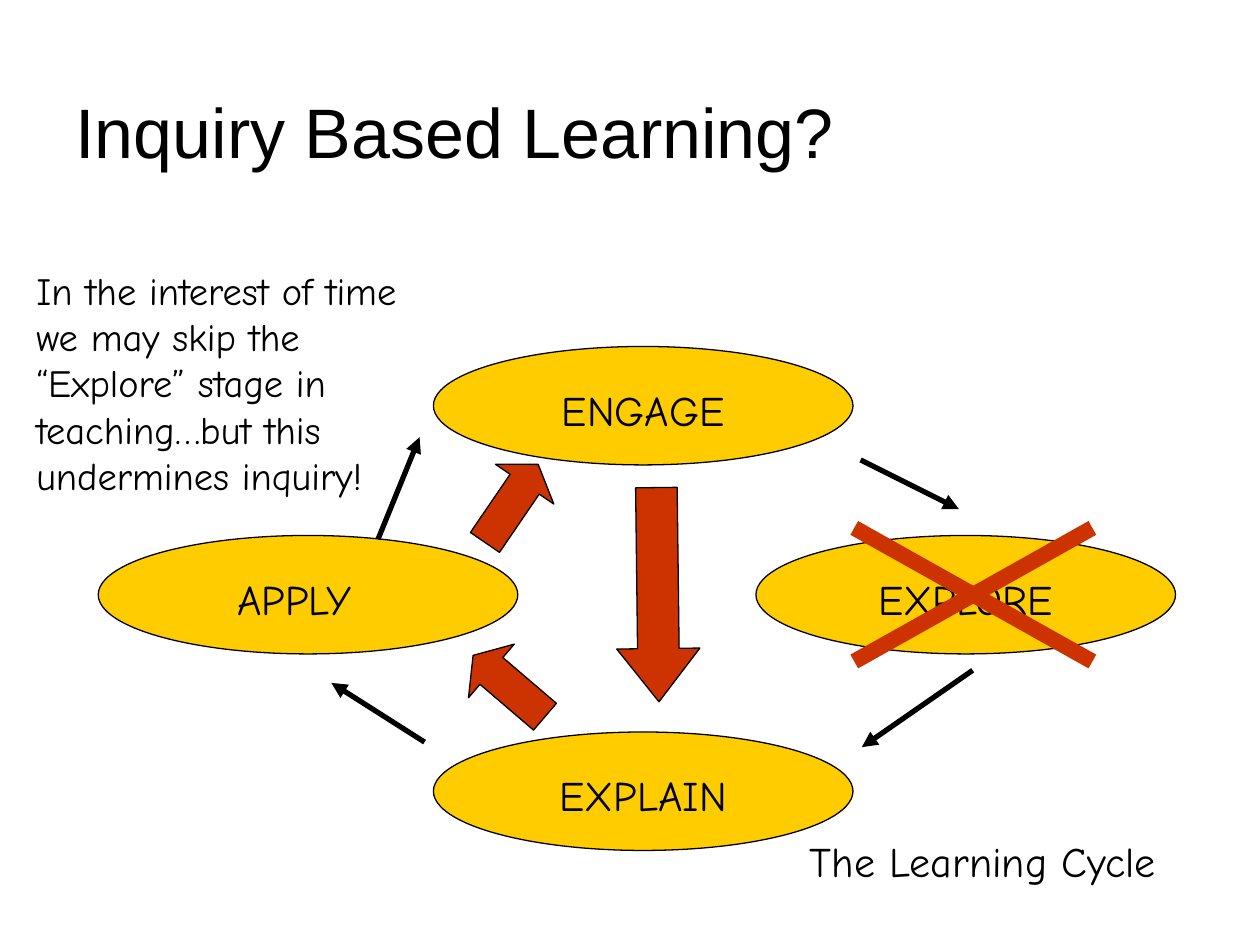
"""Build the learning cycle slide on inquiry based learning."""
from lxml.etree import SubElement
from pptx import Presentation
from pptx.dml.color import RGBColor
from pptx.enum.shapes import MSO_CONNECTOR, MSO_SHAPE
from pptx.enum.text import MSO_ANCHOR, PP_ALIGN
from pptx.oxml.ns import qn
from pptx.util import Inches, Pt

BLACK = RGBColor(0x00, 0x00, 0x00)
GOLD = RGBColor(0xFF, 0xCC, 0x00)
RED = RGBColor(0xCC, 0x33, 0x00)

TITLE = "Inquiry Based Learning?"
NOTE = (
    "In the interest of time we may skip the “Explore” stage in "
    "teaching…but this undermines inquiry!"
)
CAPTION = "The Learning Cycle"

STAGE_WIDTH, STAGE_HEIGHT = 3.33, 0.94
LABEL_WIDTH, LABEL_HEIGHT = 2.44, 0.5
STAGES = [
    ("ENGAGE", 3.44, 2.75, 0),
    ("EXPLORE", 6, 4.25, 0),
    ("EXPLAIN", 3.44, 5.81, 0),
    ("APPLY", 0.78, 4.25, -0.11),
]
CYCLE_STEPS = [
    ((6.83, 3.65), (7.61, 4.04)),
    ((7.72, 5.32), (6.84, 5.93)),
    ((3.37, 5.89), (2.63, 5.42)),
    ((3, 4.28), (3.33, 3.47)),
]
CROSS_STROKES = [
    ((6.78, 4.19), (8.67, 5.25)),
    ((8.67, 4.19), (6.78, 5.25)),
]
SHORTCUTS = [
    (3.78, 3.62, 0.56, 0.75, 214.3, 0.34),
    (4.89, 3.87, 0.66, 1.7, 359.3, 0.64),
    (3.76, 5.07, 0.56, 0.75, 130.5, 0.34),
]


def add_text(slide, text, left, top, width, height, size,
             font="Comic Neue", align=PP_ALIGN.LEFT, anchor=MSO_ANCHOR.TOP):
    box = slide.shapes.add_textbox(
        Inches(left), Inches(top), Inches(width), Inches(height))
    frame = box.text_frame
    frame.word_wrap = True
    frame.vertical_anchor = anchor
    paragraph = frame.paragraphs[0]
    paragraph.text = text
    paragraph.alignment = align
    paragraph.font.name = font
    paragraph.font.size = Pt(size)
    paragraph.font.color.rgb = BLACK


def add_outlined(slide, preset, left, top, width, height, fill):
    outlined = slide.shapes.add_shape(
        preset, Inches(left), Inches(top), Inches(width), Inches(height))
    outlined.shadow.inherit = False
    outlined.fill.solid()
    outlined.fill.fore_color.rgb = fill
    outlined.line.color.rgb = BLACK
    outlined.line.width = Pt(0.75)
    return outlined


def add_line(slide, start, end, color, weight, arrow=False):
    stroke = slide.shapes.add_connector(
        MSO_CONNECTOR.STRAIGHT, *(Inches(value) for value in start + end))
    stroke.line.color.rgb = color
    stroke.line.width = Pt(weight)
    if arrow:
        SubElement(stroke.line._get_or_add_ln(), qn("a:tailEnd"), type="triangle")
    SubElement(stroke._element.spPr, qn("a:effectLst"))


def main():
    deck = Presentation()
    deck.slide_width, deck.slide_height = Inches(10), Inches(7.5)
    slide = deck.slides.add_slide(deck.slide_layouts[6])

    for _, left, top, _ in STAGES:
        add_outlined(slide, MSO_SHAPE.OVAL, left, top, STAGE_WIDTH, STAGE_HEIGHT, GOLD)
    for name, left, top, shift in STAGES:
        label_left = left + (STAGE_WIDTH - LABEL_WIDTH) / 2 + shift
        add_text(slide, name, label_left, top + 0.25, LABEL_WIDTH, LABEL_HEIGHT,
                 24, align=PP_ALIGN.CENTER)
    for start, end in CYCLE_STEPS:
        add_line(slide, start, end, BLACK, 3, arrow=True)
    add_text(slide, CAPTION, 6.33, 6.58, 3.31, 0.5, 24)
    for start, end in CROSS_STROKES:
        add_line(slide, start, end, RED, 9)
    for left, top, width, height, angle, head in SHORTCUTS:
        shortcut = add_outlined(
            slide, MSO_SHAPE.DOWN_ARROW, left, top, width, height, RED)
        shortcut.rotation = angle
        shortcut.adjustments[0] = 0.5
        shortcut.adjustments[1] = head
    add_text(slide, TITLE, 0.5, 0.5, 7.75, 0.92, 40, "Arial", anchor=MSO_ANCHOR.BOTTOM)
    add_text(slide, NOTE, 0.19, 2.07, 3.19, 1.93, 22)

    deck.save("out.pptx")


if __name__ == "__main__":
    main()
